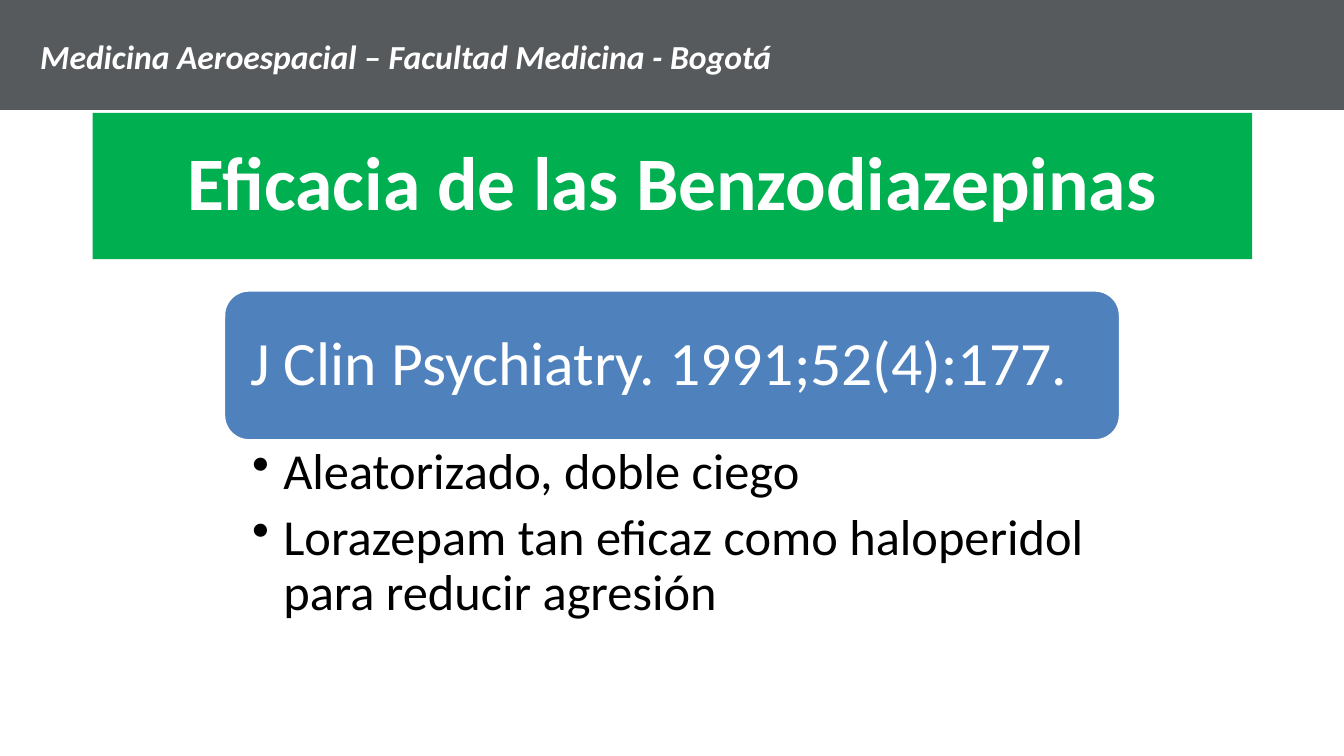
"""Build the slide on the efficacy of benzodiazepines."""
from lxml import etree
from pptx import Presentation
from pptx.dml.color import RGBColor
from pptx.enum.shapes import MSO_SHAPE
from pptx.enum.text import MSO_ANCHOR, PP_ALIGN
from pptx.oxml.ns import qn
from pptx.util import Inches, Pt

RECTANGLE, ROUNDED = MSO_SHAPE.RECTANGLE, MSO_SHAPE.ROUNDED_RECTANGLE
TOP, MIDDLE = MSO_ANCHOR.TOP, MSO_ANCHOR.MIDDLE
LEFT, CENTER = PP_ALIGN.LEFT, PP_ALIGN.CENTER

FONT = "Calibri"
WHITE, BLACK, GRAY, GREEN, BLUE = "FFFFFF", "000000", "565A5C", "00B050", "4F81BD"
SLIDE_WIDTH, SLIDE_HEIGHT = 13.33, 7.5
BULLET_INDENT = 0.31

COURSE = "Medicina Aeroespacial – Facultad Medicina - Bogotá"
TITLE = "Eficacia de las Benzodiazepinas"
CITATION = "J Clin Psychiatry. 1991;52(4):177."
FINDINGS = [
    "Aleatorizado, doble ciego",
    "Lorazepam tan eficaz como haloperidol para reducir agresión",
]

HEADER_AREA = (0, 0, SLIDE_WIDTH, 1.09)
COURSE_AREA = (0.3, 0.31, 7.51, 0.5)
TITLE_AREA = (0.92, 1.12, 11.5, 1.45)
CITATION_AREA = (2.22, 2.88, 8.89, 1.49)
FINDINGS_AREA = (2.22, 4.38, 8.89, 1.88)


def color(code):
    return RGBColor.from_string(code)


def add_panel(page, kind, area, fill, outline=None):
    panel = page.shapes.add_shape(kind, *map(Inches, area))
    panel.shadow.inherit = False
    panel.fill.solid()
    panel.fill.fore_color.rgb = color(fill)
    if outline:
        panel.line.color.rgb = color(outline)
        panel.line.width = Pt(2)
    else:
        panel.line.fill.background()
    return panel


def add_bullet(para):
    properties = para._p.get_or_add_pPr()
    properties.set("marL", str(Inches(BULLET_INDENT)))
    properties.set("indent", str(-Inches(BULLET_INDENT)))
    etree.SubElement(properties, qn("a:buChar")).set("char", "•")


def write(shape, lines, size, ink=WHITE, align=LEFT, anchor=MIDDLE, side=0.1,
          spacing=0.9, after=0, bullets=False, bold=False, italic=False, wrap=True):
    frame = shape.text_frame
    frame.word_wrap = wrap
    frame.vertical_anchor = anchor
    frame.margin_left = frame.margin_right = Inches(side)
    frame.margin_top = frame.margin_bottom = Inches(0.05)
    frame.text = "\n".join(lines)
    for para in frame.paragraphs:
        if bullets:
            add_bullet(para)
        para.alignment = align
        para.line_spacing = spacing
        para.space_after = Pt(after)
        for span in para.runs:
            span.font.name = FONT
            span.font.size = Pt(size)
            span.font.bold = bold
            span.font.italic = italic
            span.font.color.rgb = color(ink)


def main():
    deck = Presentation()
    deck.slide_width, deck.slide_height = Inches(SLIDE_WIDTH), Inches(SLIDE_HEIGHT)
    page = deck.slides.add_slide(deck.slide_layouts[6])

    add_panel(page, RECTANGLE, HEADER_AREA, GRAY)
    title = add_panel(page, RECTANGLE, TITLE_AREA, GREEN)
    write(title, [TITLE], 54, align=CENTER, bold=True)

    citation = add_panel(page, ROUNDED, CITATION_AREA, BLUE, WHITE)
    write(citation, [CITATION], 44, side=0.19)

    findings = page.shapes.add_textbox(*map(Inches, FINDINGS_AREA))
    write(findings, FINDINGS, 36, BLACK, anchor=TOP, side=0.28, after=8, bullets=True)

    course = page.shapes.add_textbox(*map(Inches, COURSE_AREA))
    write(course, [COURSE], 24, anchor=TOP, spacing=1.0, bold=True, italic=True, wrap=False)

    deck.save("out.pptx")


if __name__ == "__main__":
    main()
